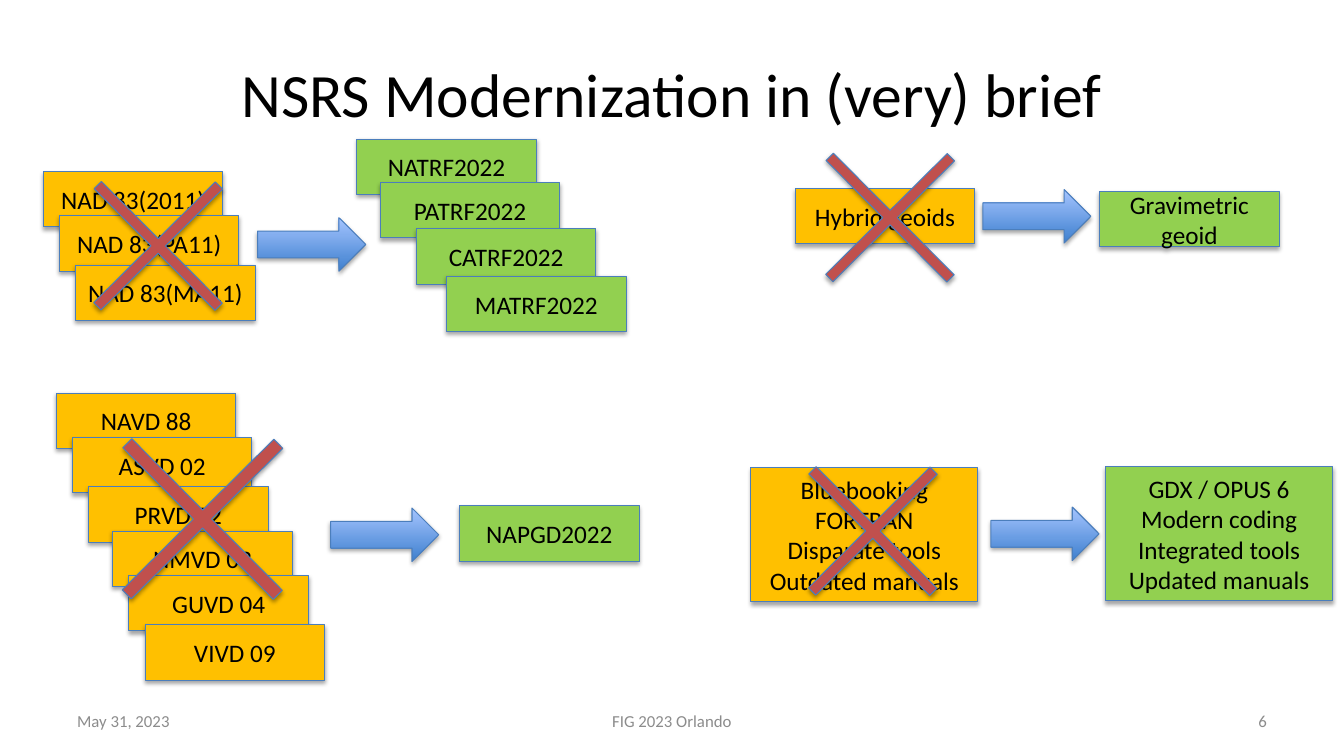
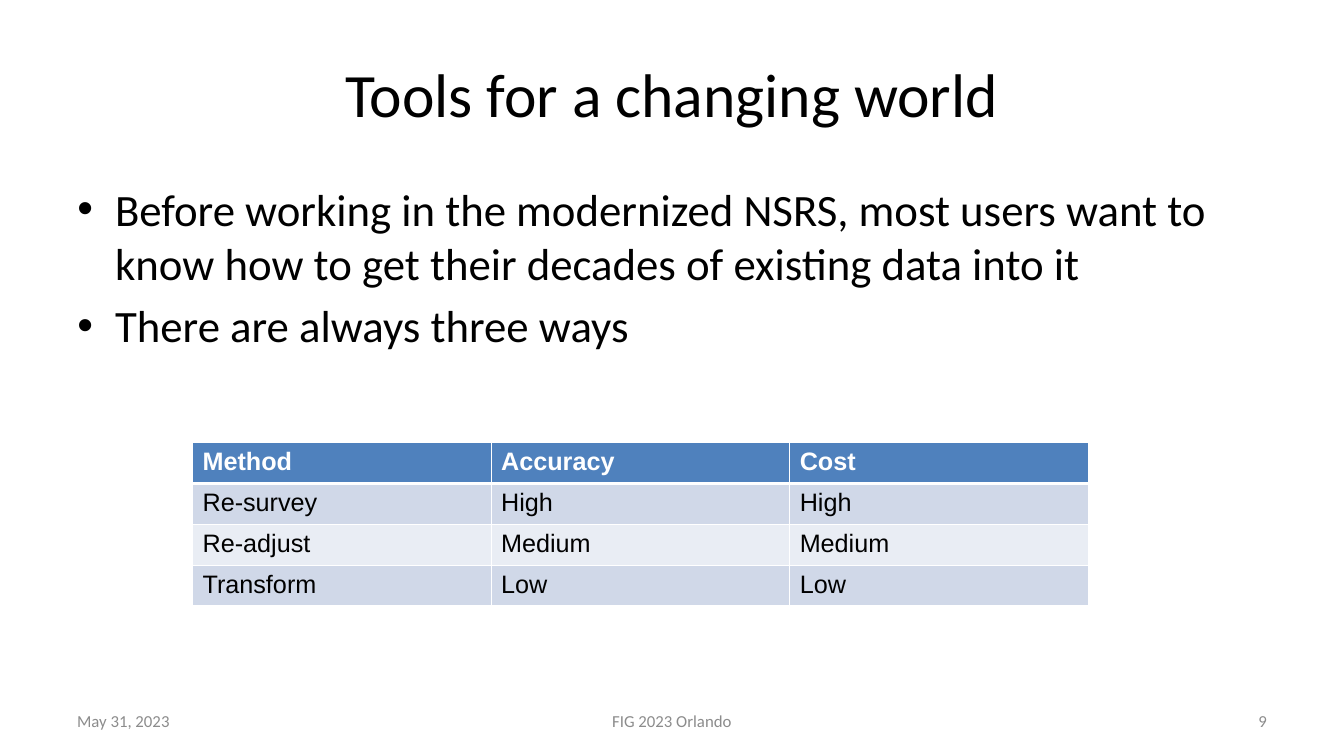
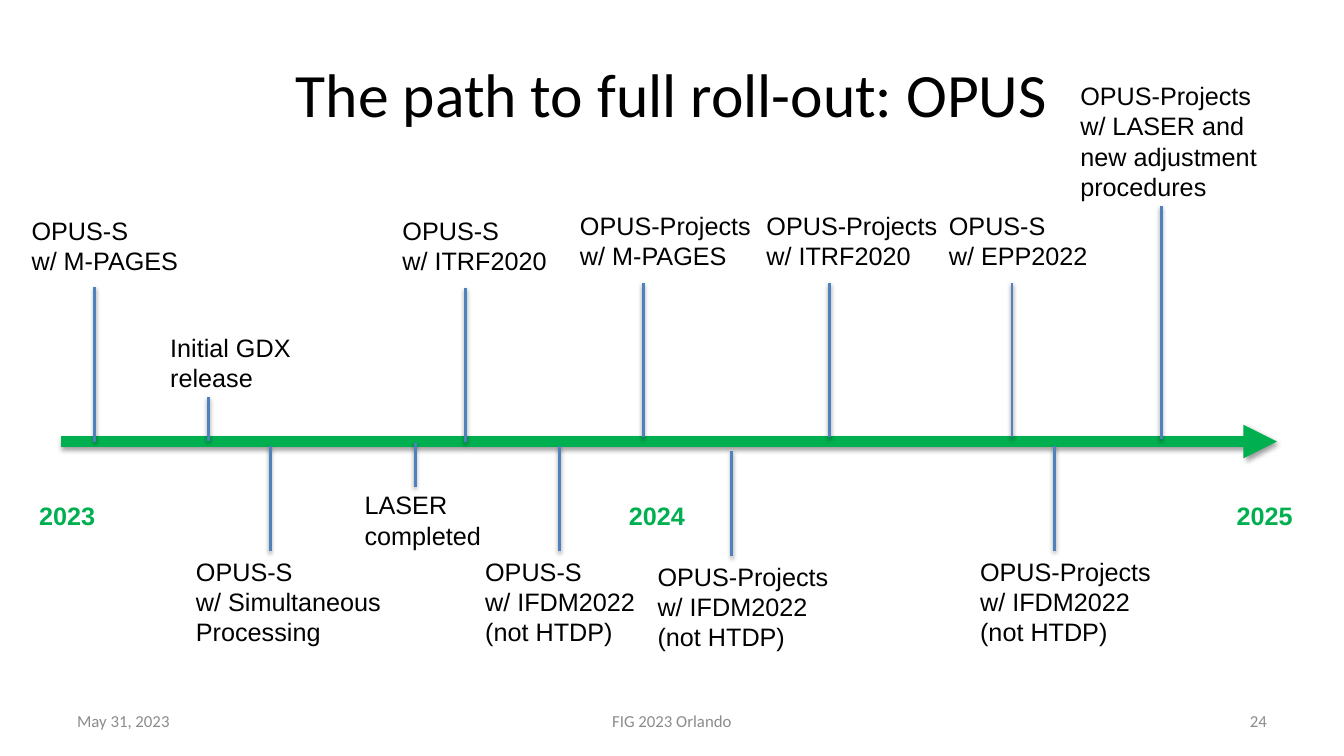
from dataclasses import dataclass

from lxml import etree
from pptx import Presentation
from pptx.dml.color import RGBColor
from pptx.enum.shapes import MSO_CONNECTOR as Connector, MSO_SHAPE as Shape
from pptx.enum.text import MSO_ANCHOR as Anchor, MSO_AUTO_SIZE as AutoSize, PP_ALIGN as Align
from pptx.oxml.ns import qn
from pptx.util import Pt


@dataclass(frozen=True)
class Theme:
    ink: str = "000000"
    paper: str = "FFFFFF"
    muted: str = "8C8C8C"
    retired: str = "FFC000"
    modern: str = "92D050"
    strike: str = "C0504D"
    outline: str = "4B7EBC"
    accent: str = "4F81BD"
    arrow_dark: str = "3F80CE"
    arrow_light: str = "A4C4FF"
    timeline: str = "00B050"
    bands: tuple = ("D0D8E8", "E9EDF4")
    heading_font: str = "Calibri"
    label_font: str = "Arial"
    title_size: int = 44
    body_size: int = 32
    label_size: int = 18
    footer_size: int = 12


def rgb(code):
    return RGBColor.from_string(code)


def place(item, left, top, width, height):
    item.left, item.top, item.width, item.height = map(Pt, (left, top, width, height))


def cast_shadow(effects, opacity, distance):
    """Fill an effect list with a soft shadow falling straight down."""
    outer = etree.SubElement(effects, qn("a:outerShdw"), blurRad=str(Pt(3.1)),
                             dist=str(Pt(distance)), dir="5400000", rotWithShape="0")
    color = etree.SubElement(outer, qn("a:srgbClr"), val="000000")
    etree.SubElement(color, qn("a:alpha"), val=str(opacity * 1000))


def border_cell(cell, top, bottom, color):
    props = cell._tc.get_or_add_tcPr()
    for side, width in (("L", 1), ("R", 1), ("T", top), ("B", bottom)):
        edge = etree.SubElement(props, qn(f"a:ln{side}"), w=str(Pt(width)))
        fill = etree.SubElement(edge, qn("a:solidFill"))
        etree.SubElement(fill, qn("a:srgbClr"), val=color)


class Deck:
    TITLE_ONLY, TITLE_AND_BODY = 5, 1
    BOX = (128.2, 39.6)
    TRIO_STEPS = ((0, 0), (11.5, 31.7), (23, 67))

    def __init__(self, theme):
        self.theme = theme
        self.file = Presentation()
        self.file.slide_width, self.file.slide_height = Pt(960), Pt(540)
        self.slide = None

    def add_text(self, frame, text, size, font, color=None, bold=False, align=Align.LEFT, gap=0):
        for index, line in enumerate(text.split("\n")):
            para = frame.add_paragraph() if index else frame.paragraphs[0]
            para.alignment = align
            para.space_before = Pt(gap if index else 0)
            run = para.add_run()
            run.text = line
            run.font.size, run.font.name, run.font.bold = Pt(size), font, bold
            run.font.color.rgb = rgb(color or self.theme.ink)

    def new_slide(self, title, number, layout=TITLE_ONLY):
        t = self.theme
        self.slide = self.file.slides.add_slide(self.file.slide_layouts[layout])
        heading = self.slide.shapes.title
        place(heading, 48, 21.6, 864, 90)
        self.add_text(heading.text_frame, title, t.title_size, t.heading_font, align=Align.CENTER)
        for left, width, text, align in ((48, 224, "May 31, 2023", Align.LEFT),
                                         (328, 304, "FIG 2023 Orlando", Align.CENTER),
                                         (688, 224, str(number), Align.RIGHT)):
            footer = self.slide.shapes.add_textbox(Pt(left), Pt(500.5), Pt(width), Pt(28.8))
            footer.text_frame.word_wrap = True
            footer.text_frame.vertical_anchor = Anchor.MIDDLE
            self.add_text(footer.text_frame, text, t.footer_size, t.heading_font, t.muted,
                          align=align)

    def bullets(self, text):
        body = self.slide.placeholders[1]
        place(body, 48, 126, 864, 356.4)
        self.add_text(body.text_frame, text, self.theme.body_size, self.theme.heading_font,
                      gap=6.4)

    def shape(self, kind, left, top, width, height, fill=None):
        item = self.slide.shapes.add_shape(kind, Pt(left), Pt(top), Pt(width), Pt(height))
        item.shadow.inherit = False
        cast_shadow(item._element.spPr.find(qn("a:effectLst")), 35, 1.8)
        if fill:
            item.fill.solid()
            item.fill.fore_color.rgb = rgb(fill)
        item.line.color.rgb = rgb(self.theme.outline)
        item.line.width = Pt(0.75)
        return item

    def box(self, left, top, text, fill, size=BOX):
        item = self.shape(Shape.RECTANGLE, left, top, *size, fill)
        item.text_frame.vertical_anchor = Anchor.MIDDLE
        self.add_text(item.text_frame, text, self.theme.label_size, self.theme.heading_font,
                      align=Align.CENTER)

    def trio(self, left, top, labels):
        """Three retired boxes, each overlapping the one before."""
        for (dx, dy), label in zip(self.TRIO_STEPS, labels):
            self.box(left + dx, top + dy, label, self.theme.retired)

    def cross_out(self, left, top, size=122.4):
        cross = self.shape(Shape.CROSS, left, top, size, size, self.theme.strike)
        cross.adjustments[0] = 0.47
        cross.rotation = 45.2

    def block_arrow(self, left, top):
        arrow = self.shape(Shape.RIGHT_ARROW, left, top, 77.2, 38.2)
        arrow.fill.gradient()
        arrow.fill.gradient_angle = 90
        for stop, color in zip(arrow.fill.gradient_stops,
                               (self.theme.arrow_dark, self.theme.arrow_light)):
            stop.color.rgb = rgb(color)

    def line(self, start, end, color, width, arrow=False):
        item = self.slide.shapes.add_connector(Connector.STRAIGHT, *map(Pt, start + end))
        item.line.color.rgb = rgb(color)
        item.line.width = Pt(width)
        props = item._element.spPr
        if arrow:
            etree.SubElement(props.find(qn("a:ln")), qn("a:tailEnd"), type="triangle")
        cast_shadow(etree.SubElement(props, qn("a:effectLst")), 38, 1.6)

    def label(self, left, top, width, text, color=None, bold=False):
        height = 7.2 + 21.6 * len(text.split("\n"))
        item = self.slide.shapes.add_textbox(Pt(left), Pt(top), Pt(width), Pt(height))
        item.text_frame.word_wrap = False
        item.text_frame.auto_size = AutoSize.SHAPE_TO_FIT_TEXT
        self.add_text(item.text_frame, text, self.theme.label_size, self.theme.label_font,
                      color, bold)

    def event(self, x, tip, stem, offset, width, text):
        """A stem from the timeline to its tip, with a label offset from the tip."""
        self.line((x, tip + stem), (x, tip), self.theme.accent, 2)
        self.label(x + offset[0], tip + offset[1], width, text)

    def table(self, left, top, column_width, row_height, rows):
        t = self.theme
        columns = len(rows[0])
        grid = self.slide.shapes.add_table(len(rows), columns, Pt(left), Pt(top),
                                           Pt(column_width * columns),
                                           Pt(row_height * len(rows))).table
        for r, row in enumerate(rows):
            header = r == 0
            for c, text in enumerate(row):
                cell = grid.cell(r, c)
                border_cell(cell, 3 if r == 1 else 1, 3 if header else 1, t.paper)
                cell.fill.solid()
                cell.fill.fore_color.rgb = rgb(t.accent if header else t.bands[(r - 1) % 2])
                self.add_text(cell.text_frame, text, t.label_size, t.label_font,
                              t.paper if header else t.ink, header)


def modernization(deck):
    t = deck.theme
    deck.new_slide("NSRS Modernization in (very) brief", 6)

    deck.trio(31, 122.4, ("NAD 83(2011)", "NAD 83(PA11)", "NAD 83(MA11)"))
    for left, top, plate in ((254.9, 99.4, "NATRF2022"), (271.6, 130.3, "PATRF2022"),
                             (297.4, 163.4, "CATRF2022"), (319, 197.3, "MATRF2022")):
        deck.box(left, top, plate, t.modern)
    deck.cross_out(51.8, 114.5)
    deck.block_arrow(184, 155.5)

    deck.trio(40.3, 280.8, ("NAVD 88", "ASVD 02", "PRVD 02"))
    deck.trio(80.6, 379.4, ("NMVD 03", "GUVD 04", "VIVD 09"))
    deck.box(328.3, 361.4, "NAPGD2022", t.modern)
    deck.cross_out(68.4, 294.5, 152.6)
    deck.block_arrow(236.2, 362.9)

    deck.box(568.1, 134.6, "Hybrid geoids", t.retired)
    deck.box(785.5, 136.8, "Gravimetric geoid", t.modern)
    deck.cross_out(574.6, 94.3)
    deck.block_arrow(702, 135.4)

    practice_size = (162, 95.8)
    deck.box(536.4, 334.1, "Bluebooking\nFORTRAN\nDisparate tools\nOutdated manuals",
             t.retired, practice_size)
    deck.box(789.8, 333.4, "GDX / OPUS 6\nModern coding\nIntegrated tools\nUpdated manuals",
             t.modern, practice_size)
    deck.cross_out(562.3, 318.2)
    deck.block_arrow(707.8, 362.2)


def tools(deck):
    deck.new_slide("Tools for a changing world", 9, deck.TITLE_AND_BODY)
    deck.bullets("Before working in the modernized NSRS, most users want to "
                 "know how to get their decades of existing data into it\n"
                 "There are always three ways")
    deck.table(137.5, 316.1, 213.3, 29.2, (("Method", "Accuracy", "Cost"),
                                           ("Re-survey", "High", "High"),
                                           ("Re-adjust", "Medium", "Medium"),
                                           ("Transform", "Low", "Low")))


def roll_out(deck):
    t = deck.theme
    deck.new_slide("The path to full roll-out: OPUS", 24)
    deck.line((43.9, 315.4), (912.2, 315.4), t.timeline, 8, arrow=True)
    for left, year in ((20.9, "2023"), (442.1, "2024"), (876.2, "2025")):
        deck.label(left, 353.5, 54.7, year, t.timeline, bold=True)

    for x, tip, width, text in ((67.7, 205.2, 120.2, "OPUS-S\nw/ M-PAGES"),
                                (332.6, 205.6, 118.8, "OPUS-S\nw/ ITRF2020"),
                                (459.4, 202, 137.5, "OPUS-Projects\nw/ M-PAGES"),
                                (592.6, 202, 137.5, "OPUS-Projects\nw/ ITRF2020"),
                                (722.9, 202, 114.5, "OPUS-S\nw/ EPP2022")):
        deck.event(x, tip, 110.4, (-52.2, -55.2), width, text)

    for x, tip, width, text in ((193, 393.8, 147.6, "OPUS-S\nw/ Simultaneous\nProcessing"),
                                (399.6, 393.8, 127.4, "OPUS-S\nw/ IFDM2022\n(not HTDP)"),
                                (522.7, 397.4, 137.5, "OPUS-Projects\nw/ IFDM2022\n(not HTDP)"),
                                (753.1, 393.5, 137.5, "OPUS-Projects\nw/ IFDM2022\n(not HTDP)")):
        deck.event(x, tip, -75, (-60.1, 0), width, text)

    deck.event(829.4, 146.9, 167, (-64.8, -92.9), 149.8,
               "OPUS-Projects\nw/ LASER and\nnew adjustment\nprocedures")
    deck.event(149, 283.7, 31, (-34.5, -49.7), 106.6, "Initial GDX\nrelease")
    deck.event(296.6, 347.8, -31.7, (-43.2, -1.5), 98.6, "LASER\ncompleted")


def main():
    deck = Deck(Theme())
    modernization(deck)
    tools(deck)
    roll_out(deck)
    deck.file.save("out.pptx")


if __name__ == "__main__":
    main()
